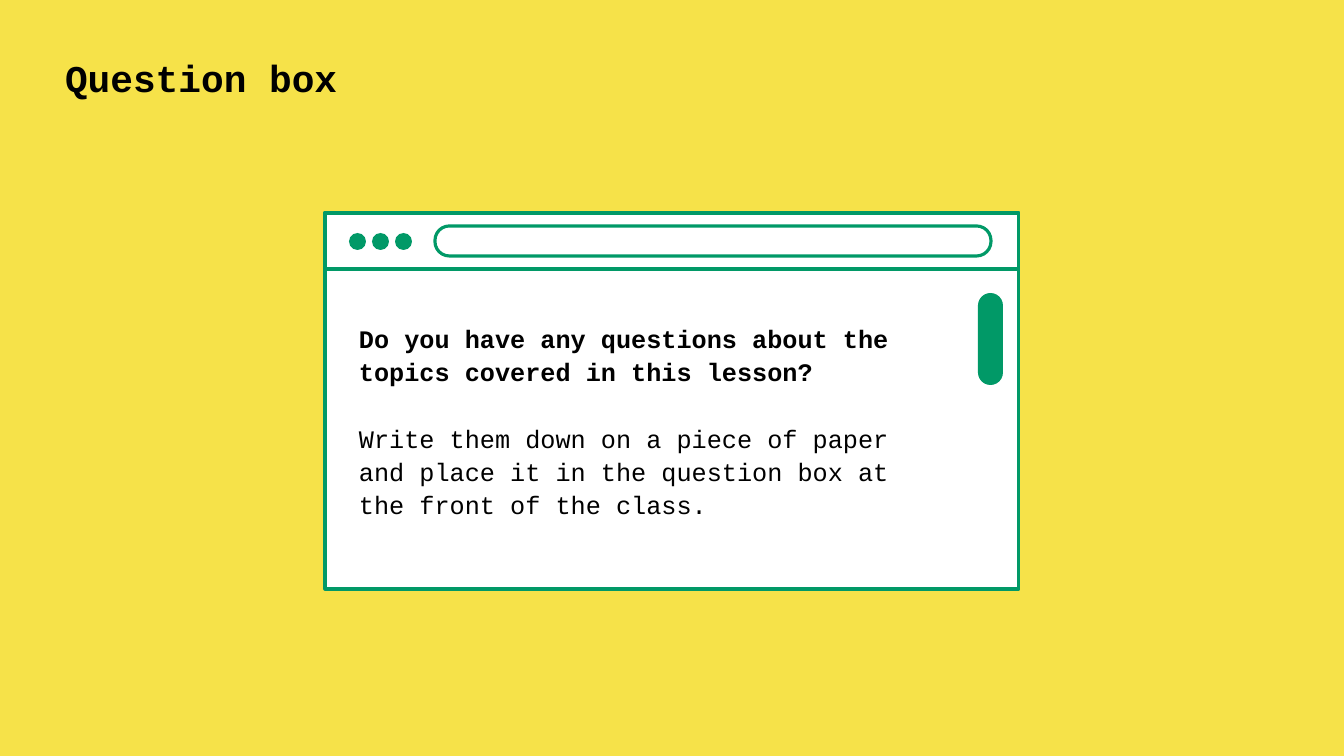
from lxml.etree import SubElement
from pptx import Presentation
from pptx.dml.color import RGBColor
from pptx.enum.shapes import MSO_SHAPE
from pptx.enum.text import MSO_ANCHOR, MSO_AUTO_SIZE, PP_ALIGN
from pptx.oxml.ns import qn
from pptx.util import Pt

TITLE = "Question box"
MESSAGES = [
    ("Do you have any questions about the topics covered in this lesson?", True, 0),
    ("Write them down on a piece of paper and place it in the question box at "
     "the front of the class.", False, 32),
]
COLORS = {"background": "F6E249", "window": "FFFFFF", "accent": "019967", "text": "000000"}
FONT = "Courier New"
SCALE = 12095
SLIDE = (1344, 756)
TITLE_BOX = (57, 51, 773, 274)
WINDOW = (325, 213, 694, 376)
BAR_HEIGHT = 56
ADDRESS = (435, 226, 556, 30)
SCROLL = (978, 293, 25, 92)
MESSAGE_BOX = (349, 315, 582, 189)
DOT_SIZE, DOT_PITCH, DOT_COUNT = 17, 23, 3
DOT_LEFT, DOT_TOP = 349, 233


def emu(values):
    return [value * SCALE for value in values]


def color(name):
    return RGBColor.from_string(COLORS[name])


def add_part(shapes, kind, place, fill=None, outlined=False, rounding=None):
    part = shapes.add_shape(kind, *emu(place))
    part.shadow.inherit = False
    if fill:
        part.fill.solid()
        part.fill.fore_color.rgb = color(fill)
    else:
        part.fill.background()
    if outlined:
        part.line.color.rgb = color("accent")
        part.line.width = Pt(3)
    else:
        part.line.fill.background()
    if rounding is not None:
        part.adjustments[0] = rounding


def set_frame(frame, horizontal, vertical):
    frame.word_wrap = True
    frame.auto_size = MSO_AUTO_SIZE.NONE
    frame.vertical_anchor = MSO_ANCHOR.TOP
    frame.margin_left = frame.margin_right = horizontal * SCALE
    frame.margin_top = frame.margin_bottom = vertical * SCALE


def style(para, size, bold):
    para.alignment = PP_ALIGN.LEFT
    para.font.name = FONT
    para.font.size = Pt(size)
    para.font.bold = bold
    para.font.color.rgb = color("text")


def add_title(page):
    title = page.shapes.title
    title.left, title.top, title.width, title.height = emu(TITLE_BOX)
    title.text = TITLE
    set_frame(title.text_frame, 8, 4)
    style(title.text_frame.paragraphs[0], 36, True)


def add_window(page):
    group = page.shapes.add_group_shape()
    left, top, width, height = WINDOW
    for part_height in (height, BAR_HEIGHT):
        add_part(group.shapes, MSO_SHAPE.RECTANGLE, (left, top, width, part_height),
                 "window", outlined=True)
    add_part(group.shapes, MSO_SHAPE.ROUNDED_RECTANGLE, SCROLL, "accent", rounding=0.5)
    for index in range(DOT_COUNT):
        place = (DOT_LEFT + index * DOT_PITCH, DOT_TOP, DOT_SIZE, DOT_SIZE)
        add_part(group.shapes, MSO_SHAPE.OVAL, place, "accent")
    add_part(group.shapes, MSO_SHAPE.ROUNDED_RECTANGLE, ADDRESS, outlined=True, rounding=0.48)
    box = group.shapes.add_textbox(*emu(MESSAGE_BOX))
    set_frame(box.text_frame, 10, 5)
    for index, (text, bold, space) in enumerate(MESSAGES):
        para = box.text_frame.paragraphs[0] if index == 0 else box.text_frame.add_paragraph()
        para.text = text
        para.line_spacing = 1.1
        para.space_before = Pt(space)
        style(para, 24, bold)


def main():
    deck = Presentation()
    deck.slide_width, deck.slide_height = emu(SLIDE)
    page = deck.slides.add_slide(deck.slide_layouts[5])
    page.background.fill.solid()
    page.background.fill.fore_color.rgb = color("background")
    add_title(page)
    add_window(page)
    deck.save("out.pptx")


if __name__ == "__main__":
    main()
